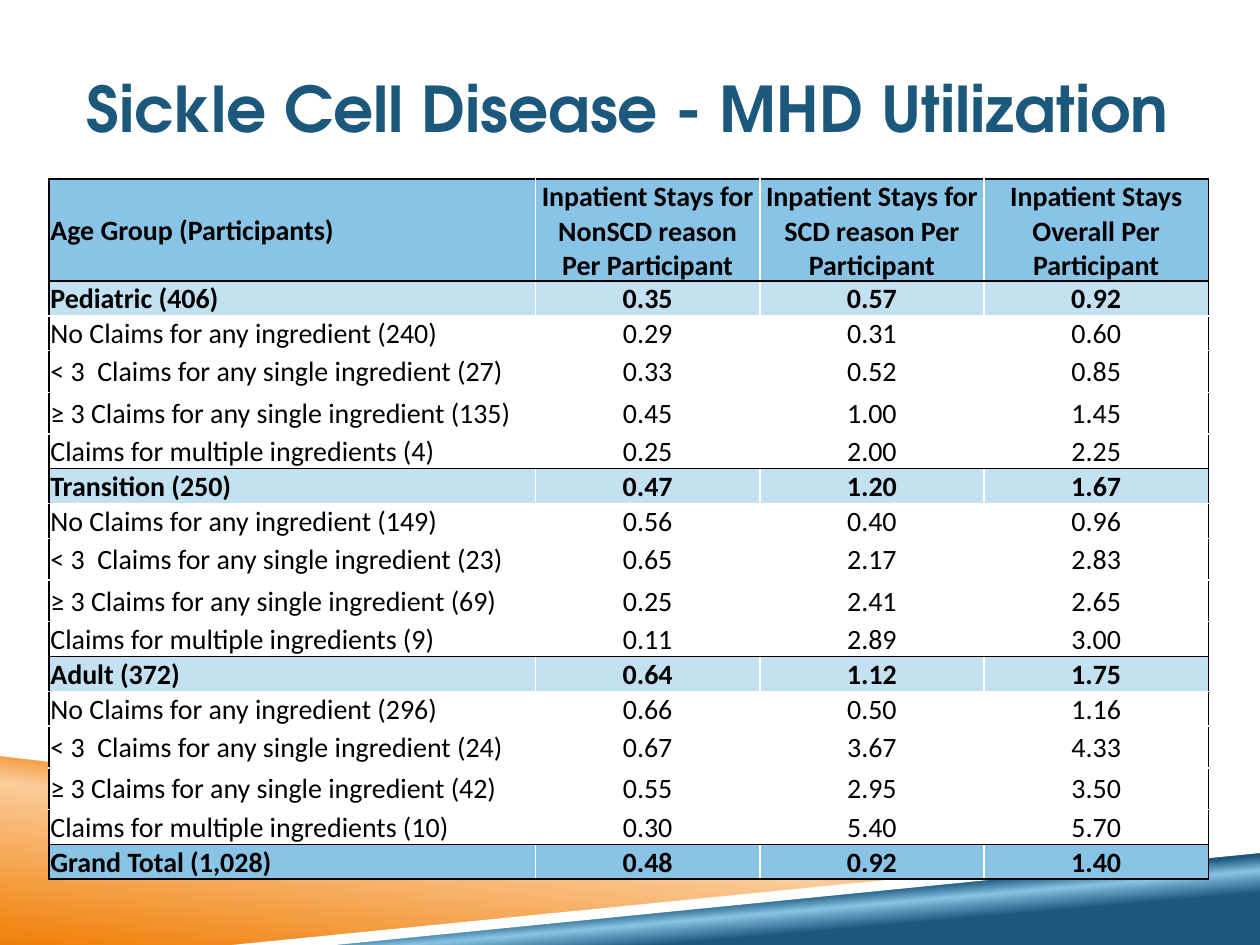
from lxml import etree
from pptx import Presentation
from pptx.dml.color import RGBColor
from pptx.enum.text import MSO_ANCHOR, PP_ALIGN
from pptx.oxml.ns import qn
from pptx.util import Inches, Pt

MIDDLE = MSO_ANCHOR.MIDDLE
LEFT, CENTER = PP_ALIGN.LEFT, PP_ALIGN.CENTER
BLACK, WHITE, NAVY, ORANGE = "000000", "FFFFFF", "1B587C", "F07F09"
SKY, PALE_SKY, PEACH = "89C3E5", "C4E1F2", "FBCC9A"

HEADER = [
    "Age Group (Participants)",
    "Inpatient Stays for NonSCD reason Per Participant",
    "Inpatient Stays for SCD reason Per Participant",
    "Inpatient Stays Overall Per Participant",
]
CLAIM_LABELS = [
    "No Claims for any ingredient",
    "< 3  Claims for any single ingredient",
    "≥ 3 Claims for any single ingredient",
    "Claims for multiple ingredients",
]
AGE_GROUPS = [
    ("Pediatric", ["406 0.35 0.57 0.92", "240 0.29 0.31 0.60", "27 0.33 0.52 0.85",
                   "135 0.45 1.00 1.45", "4 0.25 2.00 2.25"]),
    ("Transition", ["250 0.47 1.20 1.67", "149 0.56 0.40 0.96", "23 0.65 2.17 2.83",
                    "69 0.25 2.41 2.65", "9 0.11 2.89 3.00"]),
    ("Adult", ["372 0.64 1.12 1.75", "296 0.66 0.50 1.16", "24 0.67 3.67 4.33",
               "42 0.55 2.95 3.50", "10 0.30 5.40 5.70"]),
]
GRAND_TOTAL = "1,028 0.48 0.92 1.40"
GROUP_HEIGHTS = [0.27, 0.27, 0.33, 0.33, 0.27]
COLUMN_WIDTHS = [3.86, 1.78, 1.78, 1.78]


def color(value):
    return RGBColor.from_string(value)


def labelled(label, figures):
    participants, *stays = figures.split()
    return [f"{label} ({participants})", *stays]


def utilization_rows():
    rows = [(HEADER, SKY, 0.78)]
    for group, figures in AGE_GROUPS:
        labels = [group, *CLAIM_LABELS]
        fills = [PALE_SKY] + [WHITE] * len(CLAIM_LABELS)
        for label, line, fill, height in zip(labels, figures, fills, GROUP_HEIGHTS):
            rows.append((labelled(label, line), fill, height))
    rows.append((labelled("Grand Total", GRAND_TOTAL), SKY, 0.27))
    return rows


class SlideBuilder:
    title_font = "TeX Gyre Adventor"
    table_font = "Calibri"

    def __init__(self, slide):
        self.slide = slide

    def polygon(self, points, fill=None, stops=(), angle=0):
        corners = [(Inches(x), Inches(y)) for x, y in points]
        builder = self.slide.shapes.build_freeform(*corners[0])
        builder.add_line_segments(corners[1:], close=True)
        shape = builder.convert_to_shape()
        shape.shadow.inherit = False
        shape.line.fill.background()
        if fill:
            shape.fill.solid()
            shape.fill.fore_color.rgb = color(fill)
        else:
            self.gradient(shape, stops, angle)

    def gradient(self, shape, stops, angle):
        shape.fill.gradient()
        shape.fill.gradient_angle = 360 - angle
        stop_list = shape.element.spPr.find(".//" + qn("a:gsLst"))
        for stop in list(stop_list):
            stop_list.remove(stop)
        for position, value in stops:
            stop = etree.SubElement(stop_list, qn("a:gs"), pos=str(position * 1000))
            etree.SubElement(stop, qn("a:srgbClr"), val=value)

    def style(self, paragraph, font, size, value, bold, alignment):
        paragraph.alignment = alignment
        paragraph.font.name = font
        paragraph.font.size = Pt(size)
        paragraph.font.bold = bold
        paragraph.font.color.rgb = color(value)

    def title(self, text, left, top, width, height):
        box = self.slide.shapes.add_textbox(
            Inches(left), Inches(top), Inches(width), Inches(height))
        frame = box.text_frame
        frame.word_wrap = True
        frame.vertical_anchor = MIDDLE
        frame.margin_left = frame.margin_right = 0
        frame.text = text
        self.style(frame.paragraphs[0], self.title_font, 36, NAVY, True, CENTER)

    def borders(self, cell, sides):
        properties = cell._tc.get_or_add_tcPr()
        for side, value in sides.items():
            line = etree.SubElement(properties, qn(f"a:ln{side}"), w=str(Pt(1)))
            fill = etree.SubElement(line, qn("a:solidFill"))
            etree.SubElement(fill, qn("a:srgbClr"), val=value)

    def cell(self, cell, text, fill, alignment, sides):
        self.borders(cell, sides)
        cell.fill.solid()
        cell.fill.fore_color.rgb = color(fill)
        cell.vertical_anchor = MIDDLE
        cell.margin_left = cell.margin_right = cell.margin_top = Inches(0.01)
        cell.margin_bottom = 0
        cell.text = text
        self.style(cell.text_frame.paragraphs[0], self.table_font, 16, BLACK,
                   fill != WHITE, alignment)

    def table(self, rows, widths, left, top):
        heights = [height for _, _, height in rows]
        table = self.slide.shapes.add_table(
            len(rows), len(widths), Inches(left), Inches(top),
            Inches(sum(widths)), Inches(sum(heights))).table
        table.first_row = table.horz_banding = False
        for column, width in zip(table.columns, widths):
            column.width = Inches(width)
        rules = [BLACK if fill != WHITE else WHITE for _, fill, _ in rows] + [BLACK]
        edges = [BLACK] + [WHITE] * (len(widths) - 1) + [BLACK]
        for i, (texts, fill, height) in enumerate(rows):
            table.rows[i].height = Inches(height)
            for j, text in enumerate(texts):
                sides = {"L": edges[j], "R": edges[j + 1],
                         "T": rules[i], "B": rules[i + 1]}
                self.cell(table.cell(i, j), text, fill, CENTER if j else LEFT, sides)


def main():
    presentation = Presentation()
    presentation.slide_width = Inches(10)
    presentation.slide_height = Inches(7.5)
    builder = SlideBuilder(presentation.slides.add_slide(presentation.slide_layouts[6]))

    builder.polygon([(0, 5.97), (7.92, 6.92), (2, 7.5), (0, 7.5)],
                    stops=[(0, ORANGE), (52, PEACH), (66, ORANGE)], angle=277)
    builder.polygon([(1.98, 7.5), (10, 6.72), (10, 7.5)],
                    stops=[(28, NAVY), (40, SKY), (48, NAVY)], angle=265)
    builder.polygon([(0, 5.92), (0, 6), (7.9, 6.93), (8.32, 6.9)], fill=WHITE)
    builder.polygon([(10, 6.69), (1.84, 7.5), (2.66, 7.5), (10, 6.77)], fill=WHITE)
    builder.title("Sickle Cell Disease - MHD Utilization", 0.67, 0.37, 8.62, 0.96)
    builder.table(utilization_rows(), COLUMN_WIDTHS, 0.39, 1.42)

    presentation.save("out.pptx")


if __name__ == "__main__":
    main()
